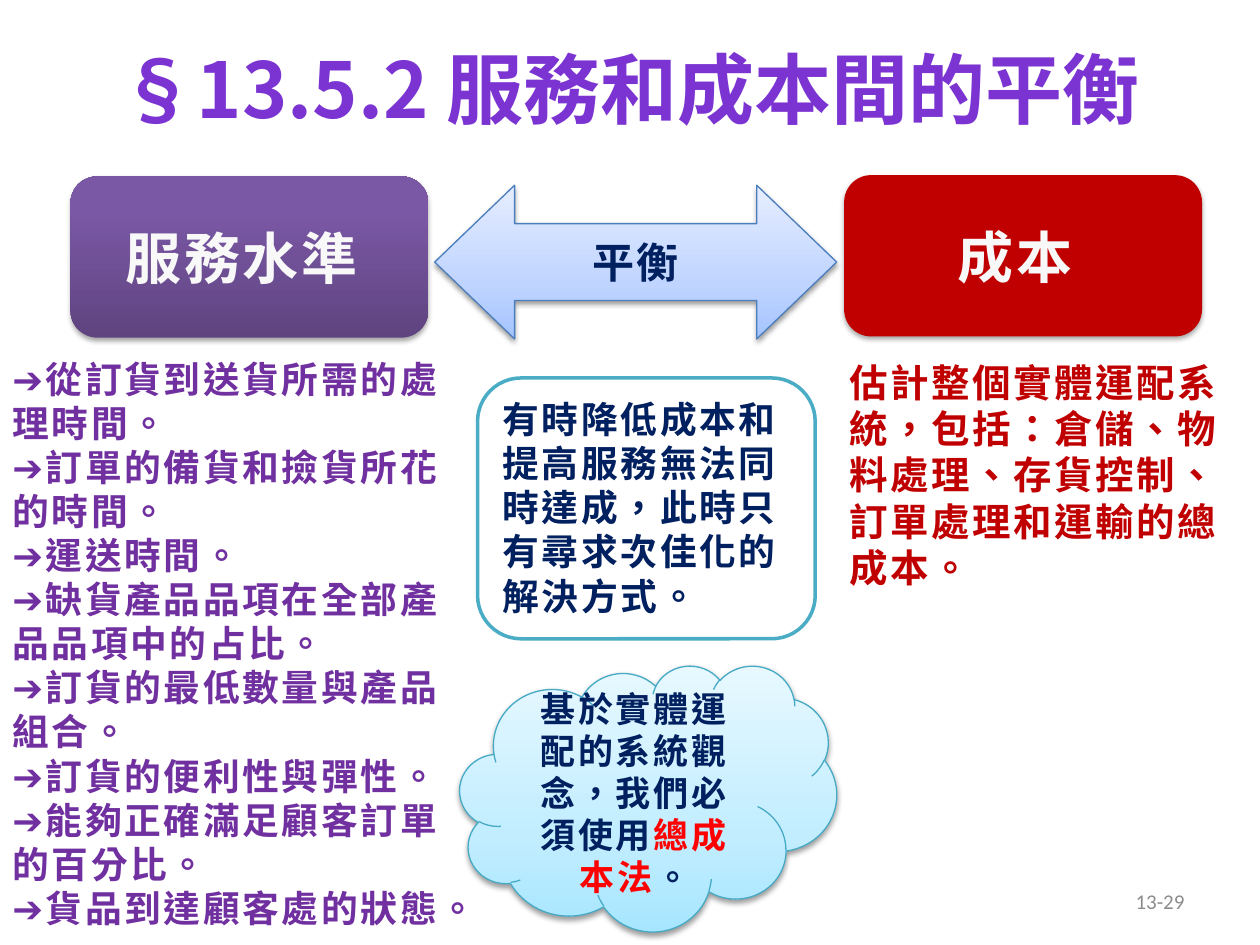
"""Build the slide on balancing service level and cost."""
from dataclasses import dataclass
from typing import Optional

import lxml.etree
import pptx
import pptx.dml.color
import pptx.enum.shapes
import pptx.enum.text
import pptx.oxml.ns
import pptx.util

Inches = pptx.util.Inches
Pt = pptx.util.Pt
RGBColor = pptx.dml.color.RGBColor
MSO_SHAPE = pptx.enum.shapes.MSO_SHAPE
PP_ALIGN = pptx.enum.text.PP_ALIGN
MSO_ANCHOR = pptx.enum.text.MSO_ANCHOR
qn = pptx.oxml.ns.qn

WHITE = RGBColor(0xFF, 0xFF, 0xFF)
OFF_WHITE = RGBColor(0xF8, 0xF8, 0xF8)
GRAY = RGBColor(0x8C, 0x8C, 0x8C)
VIOLET = RGBColor(0x7B, 0x34, 0xD2)
PURPLE = RGBColor(0x70, 0x30, 0xA0)
DARK_RED = RGBColor(0xC0, 0x00, 0x00)
RED = RGBColor(0xFF, 0x00, 0x00)
NAVY = RGBColor(0x00, 0x20, 0x60)
BLUE = RGBColor(0x4B, 0x7E, 0xBC)
TEAL = RGBColor(0x4B, 0xAC, 0xC6)
CLOUD_EDGE = RGBColor(0x46, 0xAA, 0xC5)
PURPLE_FADE = ((0, "5F4480"), (80, "7B58A6"), (100, "7C57A8"))
BLUE_FADE = ((0, "A4C4FF"), (35, "BFD4FF"), (100, "E6EEFF"))
CYAN_FADE = ((0, "A7E6FF"), (35, "C1EDFF"), (100, "E7F8FF"))
CJK_FONT = "Noto Sans CJK SC"

SERVICE_ITEMS = (
    "➔從訂貨到送貨所需的處理時間。",
    "➔訂單的備貨和撿貨所花的時間。",
    "➔運送時間。",
    "➔缺貨產品品項在全部產品品項中的占比。",
    "➔訂貨的最低數量與產品組合。",
    "➔訂貨的便利性與彈性。",
    "➔能夠正確滿足顧客訂單的百分比。",
    "➔貨品到達顧客處的狀態。",
)
COST_NOTE = "估計整個實體運配系統，包括：倉儲、物料處理、存貨控制、訂單處理和運輸的總成本。"
COMPROMISE = "有時降低成本和提高服務無法同時達成，此時只有尋求次佳化的解決方式。"
CONCLUSION = (("基於實體運配的系統觀念，我們必須使用", NAVY), ("總成本法", RED), ("。", NAVY))


@dataclass
class Box:
    """Outline, place and paint of one shape."""
    kind: MSO_SHAPE
    at: tuple
    fill: Optional[RGBColor] = None
    fade: tuple = ()
    line: Optional[RGBColor] = None
    weight: float = 0.75
    shadow: int = 0
    adjust: tuple = ()


def add_fade(sp, stops: tuple) -> None:
    """Fill a shape with a gradient rising from its bottom edge."""
    sp.fill.gradient()
    sp.fill.gradient_angle = 90
    stop_list = sp.element.spPr.find(".//" + qn("a:gsLst"))
    for old in list(stop_list):
        stop_list.remove(old)
    for position, color in stops:
        stop = lxml.etree.SubElement(stop_list, qn("a:gs"), pos=str(position * 1000))
        lxml.etree.SubElement(stop, qn("a:srgbClr"), val=color)


def add_shadow(sp, opacity: int) -> None:
    """Put a soft shadow just below a shape."""
    effects = sp.element.spPr.find(qn("a:effectLst"))
    shadow = lxml.etree.SubElement(
        effects, qn("a:outerShdw"), blurRad=str(Pt(3.1)), dist=str(Pt(1.7)),
        dir="5400000", rotWithShape="0")
    color = lxml.etree.SubElement(shadow, qn("a:srgbClr"), val="000000")
    lxml.etree.SubElement(color, qn("a:alpha"), val=str(opacity * 1000))


def add_box(slide, box: Box):
    """Draw one shape and return it."""
    sp = slide.shapes.add_shape(box.kind, *map(Inches, box.at))
    sp.shadow.inherit = False
    for i, value in enumerate(box.adjust):
        sp.adjustments[i] = value
    if box.fade:
        add_fade(sp, box.fade)
    else:
        sp.fill.solid()
        sp.fill.fore_color.rgb = box.fill
    if box.line is None:
        sp.line.fill.background()
    else:
        sp.line.color.rgb = box.line
        sp.line.width = Pt(box.weight)
    if box.shadow:
        add_shadow(sp, box.shadow)
    return sp


def write(sp, *paragraphs, size: float, color: RGBColor, font: str = "Calibri",
          bold: bool = True, spacing: float = 1.5, align=PP_ALIGN.LEFT,
          anchor=MSO_ANCHOR.TOP, wrap: bool = True, leading: float = 0) -> None:
    """Write paragraphs, each a string or a tuple of (text, colour) runs."""
    tf = sp.text_frame
    tf.word_wrap = wrap
    tf.vertical_anchor = anchor
    for i, content in enumerate(paragraphs):
        p = tf.paragraphs[0] if i == 0 else tf.add_paragraph()
        p.alignment = align
        if leading:
            p.line_spacing = Pt(size * leading)
        runs = ((content, color),) if isinstance(content, str) else content
        for text, run_color in runs:
            r = p.add_run()
            r.text = text
            r.font.size = Pt(size)
            r.font.bold = bold
            r.font.name = font
            r.font.color.rgb = run_color
            props = r.font._element
            props.set("lang", "zh-TW")
            props.set("spc", str(int(spacing * 100)))
            latin = props.find(qn("a:latin"))
            latin.addnext(props.makeelement(qn("a:ea"), {"typeface": CJK_FONT}))


def add_text(slide, at: tuple, *paragraphs, **style) -> None:
    """Add a text box and write in it."""
    write(slide.shapes.add_textbox(*map(Inches, at)), *paragraphs, **style)


def main() -> None:
    """Build and save the slide."""
    prs = pptx.Presentation()
    prs.slide_width, prs.slide_height = Inches(10), Inches(7.5)
    s = prs.slides.add_slide(prs.slide_layouts[6])
    middle = dict(align=PP_ALIGN.CENTER, anchor=MSO_ANCHOR.MIDDLE)
    label = dict(font=CJK_FONT, wrap=False, **middle)
    body = dict(leading=1.2)

    add_text(s, (0.5, 0, 9, 1.39), "§13.5.2 服務和成本間的平衡", size=44,
             color=VIOLET, font=CJK_FONT, spacing=0, **middle)
    add_text(s, (7.17, 6.95, 2.33, 0.4), "13-29", size=12, color=GRAY, bold=False,
             spacing=0, align=PP_ALIGN.RIGHT, anchor=MSO_ANCHOR.MIDDLE)

    rounded = MSO_SHAPE.ROUNDED_RECTANGLE
    service = Box(rounded, (0.56, 1.4, 2.84, 1.28), fade=PURPLE_FADE, shadow=35)
    cost = Box(rounded, (6.7, 1.39, 2.84, 1.28), fill=DARK_RED, shadow=35)
    for box, text in ((service, "服務水準 "), (cost, "成本 ")):
        write(add_box(s, box), text, size=32, color=OFF_WHITE, **label)

    balance = Box(MSO_SHAPE.LEFT_RIGHT_ARROW, (3.45, 1.47, 3.19, 1.22),
                  fade=BLUE_FADE, line=BLUE, shadow=38, adjust=(0.5, 0.52))
    write(add_box(s, balance), "平衡", size=24, color=NAVY, **label)

    service_list = Box(MSO_SHAPE.RECTANGLE, (0, 2.78, 3.9, 4.7), fill=WHITE)
    write(add_box(s, service_list), *SERVICE_ITEMS, size=21, color=PURPLE, **body)
    add_text(s, (6.64, 2.8, 3.24, 1.95), COST_NOTE, size=22, color=DARK_RED, **body)

    compromise = Box(rounded, (3.79, 3, 2.68, 2.07), fill=WHITE, line=TEAL, weight=2)
    write(add_box(s, compromise), COMPROMISE, size=21, color=NAVY, **body)

    cloud = Box(MSO_SHAPE.CLOUD, (3.65, 5.28, 2.99, 2.11), fade=CYAN_FADE,
                line=CLOUD_EDGE, shadow=38)
    write(add_box(s, cloud), CONCLUSION, size=20, color=NAVY, **middle, **body)

    prs.save("out.pptx")


if __name__ == "__main__":
    main()
